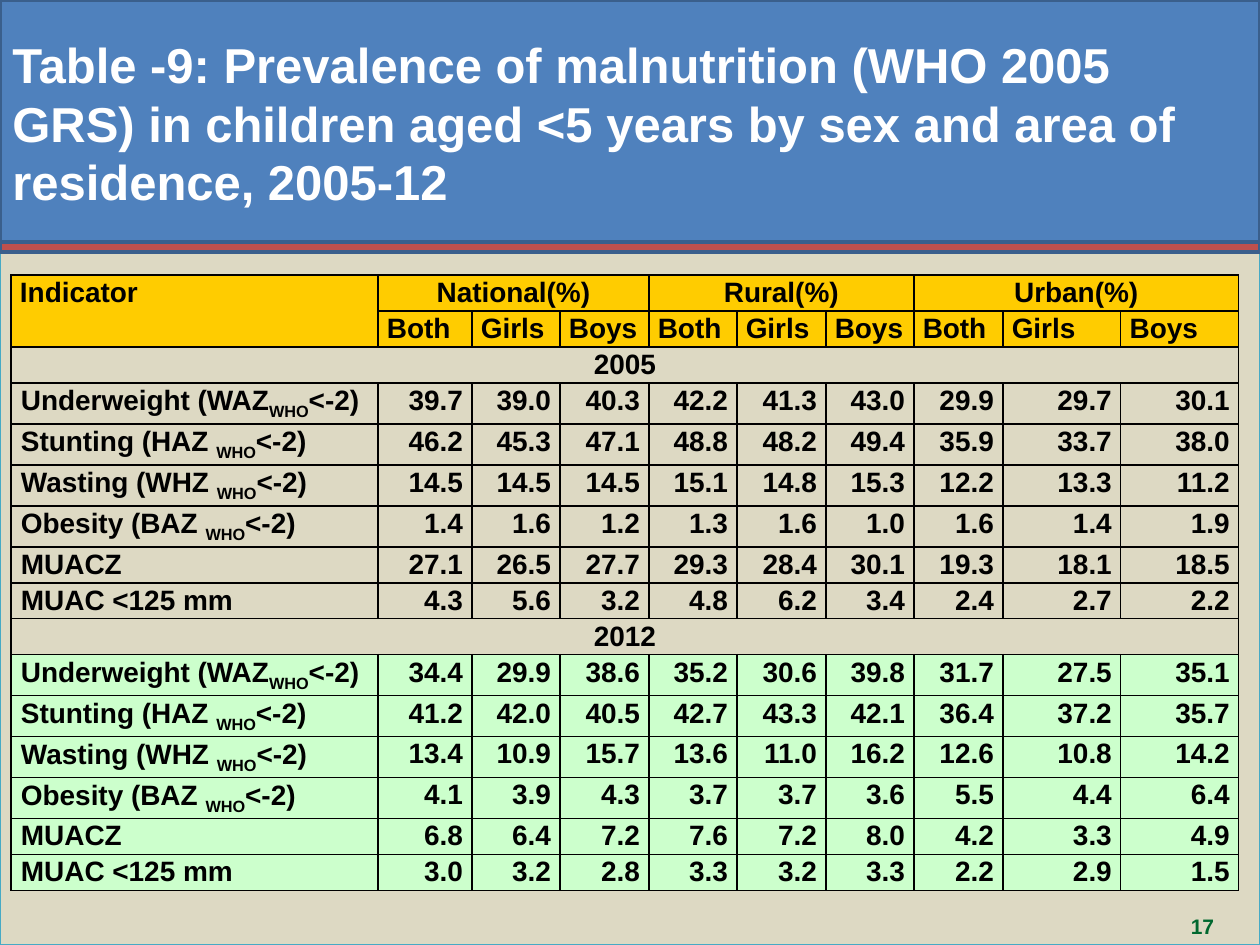
from dataclasses import dataclass
from typing import NamedTuple

from lxml import etree
from pptx import Presentation
from pptx import util as u
from pptx.dml.color import RGBColor
from pptx.enum import shapes, text
from pptx.oxml import ns

PX = 914400 / 126
LEFT, CENTER, RIGHT, JUSTIFY = (
    text.PP_ALIGN.LEFT, text.PP_ALIGN.CENTER, text.PP_ALIGN.RIGHT, text.PP_ALIGN.JUSTIFY)


@dataclass(frozen=True)
class Theme:
    font: str = "Arial"
    panel: str = "DDD9C3"
    panel_line: str = "46AAC5"
    banner: str = "4F81BD"
    stripe: str = "C0504D"
    banner_line: str = "3A5F8C"
    header: str = "FFCC00"
    recent: str = "CCFFCC"
    ink: str = "000000"
    title_ink: str = "FFFFFF"
    page_ink: str = "00682F"
    title_pt: int = 28
    table_pt: int = 16
    page_pt: int = 12
    table_spacing: float = 1.07


THEME = Theme()


class Box(NamedTuple):
    left: int
    top: int
    width: int
    height: int


class Band(NamedTuple):
    box: Box
    fill: str
    line: str
    line_pt: float


class Survey(NamedTuple):
    year: str
    fill: str | None
    rows: list[str]


BANDS = [
    Band(Box(0, 252, 1260, 693), THEME.panel, THEME.panel_line, 0.75),
    Band(Box(0, 0, 1260, 242), THEME.banner, THEME.banner_line, 2),
    Band(Box(0, 242, 1260, 10), THEME.stripe, THEME.banner_line, 2),
]
TITLE = ("Table -9: Prevalence of malnutrition (WHO 2005 GRS) in children "
         "aged <5 years by sex and area of residence, 2005-12")
AREAS = ["National(%)", "Rural(%)", "Urban(%)"]
GROUPS = ["Both", "Girls", "Boys"]
# Each indicator is the text before the subscript, the subscript, the text after it.
INDICATORS = [
    ("Underweight (WAZ", "WHO", "<-2)"),
    ("Stunting (HAZ ", "WHO", "<-2)"),
    ("Wasting (WHZ ", "WHO", "<-2)"),
    ("Obesity (BAZ ", "WHO", "<-2)"),
    ("MUACZ",),
    ("MUAC <125 mm",),
]
SURVEYS = [
    Survey("2005", None, [
        "39.7 39.0 40.3 42.2 41.3 43.0 29.9 29.7 30.1",
        "46.2 45.3 47.1 48.8 48.2 49.4 35.9 33.7 38.0",
        "14.5 14.5 14.5 15.1 14.8 15.3 12.2 13.3 11.2",
        "1.4 1.6 1.2 1.3 1.6 1.0 1.6 1.4 1.9",
        "27.1 26.5 27.7 29.3 28.4 30.1 19.3 18.1 18.5",
        "4.3 5.6 3.2 4.8 6.2 3.4 2.4 2.7 2.2",
    ]),
    Survey("2012", THEME.recent, [
        "34.4 29.9 38.6 35.2 30.6 39.8 31.7 27.5 35.1",
        "41.2 42.0 40.5 42.7 43.3 42.1 36.4 37.2 35.7",
        "13.4 10.9 15.7 13.6 11.0 16.2 12.6 10.8 14.2",
        "4.1 3.9 4.3 3.7 3.7 3.6 5.5 4.4 6.4",
        "6.8 6.4 7.2 7.6 7.2 8.0 4.2 3.3 4.9",
        "3.0 3.2 2.8 3.3 3.2 3.3 2.2 2.9 1.5",
    ]),
]
COLUMNS = [367, 94, *[88, 89] * 3, 118, 118]
PLAIN_ROW, SUBSCRIPT_ROW = 36, 41
BLOCK_ROWS = [PLAIN_ROW] + [SUBSCRIPT_ROW if len(i) > 1 else PLAIN_ROW for i in INDICATORS]
ROWS = [PLAIN_ROW] * 2 + BLOCK_ROWS * len(SURVEYS)


def px(length: int) -> u.Emu:
    return u.Emu(round(length * PX))


def place(box: Box) -> list[u.Emu]:
    return [px(side) for side in box]


def rgb(value: str) -> RGBColor:
    return RGBColor.from_string(value)


def style_paragraph(paragraph, size: int, color: str, align) -> None:
    paragraph.alignment = align
    font = paragraph.font
    font.name, font.size, font.bold = THEME.font, u.Pt(size), True
    font.color.rgb = rgb(color)


def draw_band(slide, band: Band) -> None:
    shape = slide.shapes.add_shape(shapes.MSO_SHAPE.RECTANGLE, *place(band.box))
    shape.shadow.inherit = False
    shape.fill.solid()
    shape.fill.fore_color.rgb = rgb(band.fill)
    shape.line.color.rgb = rgb(band.line)
    shape.line.width = u.Pt(band.line_pt)


def draw_text(slide, box: Box, words: str, size: int, color: str, align):
    frame = slide.shapes.add_textbox(*place(box)).text_frame
    frame.word_wrap = True
    paragraph = frame.paragraphs[0]
    paragraph.text = words
    style_paragraph(paragraph, size, color, align)
    return frame


def add_borders(cell) -> None:
    properties = cell._tc.get_or_add_tcPr()
    for position, side in enumerate(("lnL", "lnR", "lnT", "lnB")):
        line = etree.Element(ns.qn(f"a:{side}"), w=str(u.Pt(1)))
        fill = etree.SubElement(line, ns.qn("a:solidFill"))
        etree.SubElement(fill, ns.qn("a:srgbClr"), val=THEME.ink)
        properties.insert(position, line)


def style_cell(cell, fill: str | None) -> None:
    cell.margin_left = cell.margin_right = px(9)
    cell.margin_top = cell.margin_bottom = 0
    if fill:
        cell.fill.solid()
        cell.fill.fore_color.rgb = rgb(fill)
    else:
        cell.fill.background()
    add_borders(cell)
    paragraph = cell.text_frame.paragraphs[0]
    paragraph.line_spacing = THEME.table_spacing
    style_paragraph(paragraph, THEME.table_pt, THEME.ink, JUSTIFY)


def write(cell, words: str, align=JUSTIFY) -> None:
    paragraph = cell.text_frame.paragraphs[0]
    paragraph.add_run().text = words
    paragraph.alignment = align


def write_indicator(cell, parts: tuple[str, ...]) -> None:
    paragraph = cell.text_frame.paragraphs[0]
    paragraph._p.get_or_add_pPr().set("marL", str(px(1)))
    for position, part in enumerate(parts):
        run = paragraph.add_run()
        run.text = part
        if position == 1:
            run.font._element.set("baseline", "-25000")


def draw_table(slide, left: int, top: int) -> None:
    box = Box(left, top, sum(COLUMNS), sum(ROWS))
    table = slide.shapes.add_table(len(ROWS), len(COLUMNS), *place(box)).table
    table.first_row = table.horz_banding = False
    for column, width in zip(table.columns, COLUMNS):
        column.width = px(width)
    for row, height in zip(table.rows, ROWS):
        row.height = px(height)

    fills = [THEME.header] * 2
    for survey in SURVEYS:
        fills += [None] + [survey.fill] * len(INDICATORS)
    for row, fill in zip(table.rows, fills):
        for cell in row.cells:
            style_cell(cell, fill)

    table.cell(0, 0).merge(table.cell(1, 0))
    write(table.cell(0, 0), "Indicator")
    for area_index, area in enumerate(AREAS):
        first = 1 + area_index * len(GROUPS)
        table.cell(0, first).merge(table.cell(0, first + len(GROUPS) - 1))
        write(table.cell(0, first), area, CENTER)
        for offset, group in enumerate(GROUPS):
            write(table.cell(1, first + offset), group)

    for survey_index, survey in enumerate(SURVEYS):
        start = 2 + survey_index * len(BLOCK_ROWS)
        table.cell(start, 0).merge(table.cell(start, len(COLUMNS) - 1))
        write(table.cell(start, 0), survey.year, CENTER)
        for row, (indicator, rates) in enumerate(zip(INDICATORS, survey.rows), start + 1):
            write_indicator(table.cell(row, 0), indicator)
            for column, rate in enumerate(rates.split(), 1):
                write(table.cell(row, column), rate, RIGHT)


def main() -> None:
    deck = Presentation()
    deck.slide_width, deck.slide_height = px(1260), px(945)
    slide = deck.slides.add_slide(deck.slide_layouts[6])
    for band in BANDS:
        draw_band(slide, band)
    title = draw_text(slide, Box(0, 25, 1239, 195), TITLE, THEME.title_pt, THEME.title_ink, LEFT)
    title.vertical_anchor = text.MSO_ANCHOR.MIDDLE
    draw_table(slide, 11, 275)
    page = draw_text(slide, Box(1166, 907, 73, 38), "17", THEME.page_pt, THEME.page_ink, CENTER)
    page.auto_size = text.MSO_AUTO_SIZE.SHAPE_TO_FIT_TEXT
    deck.save("out.pptx")


if __name__ == "__main__":
    main()
